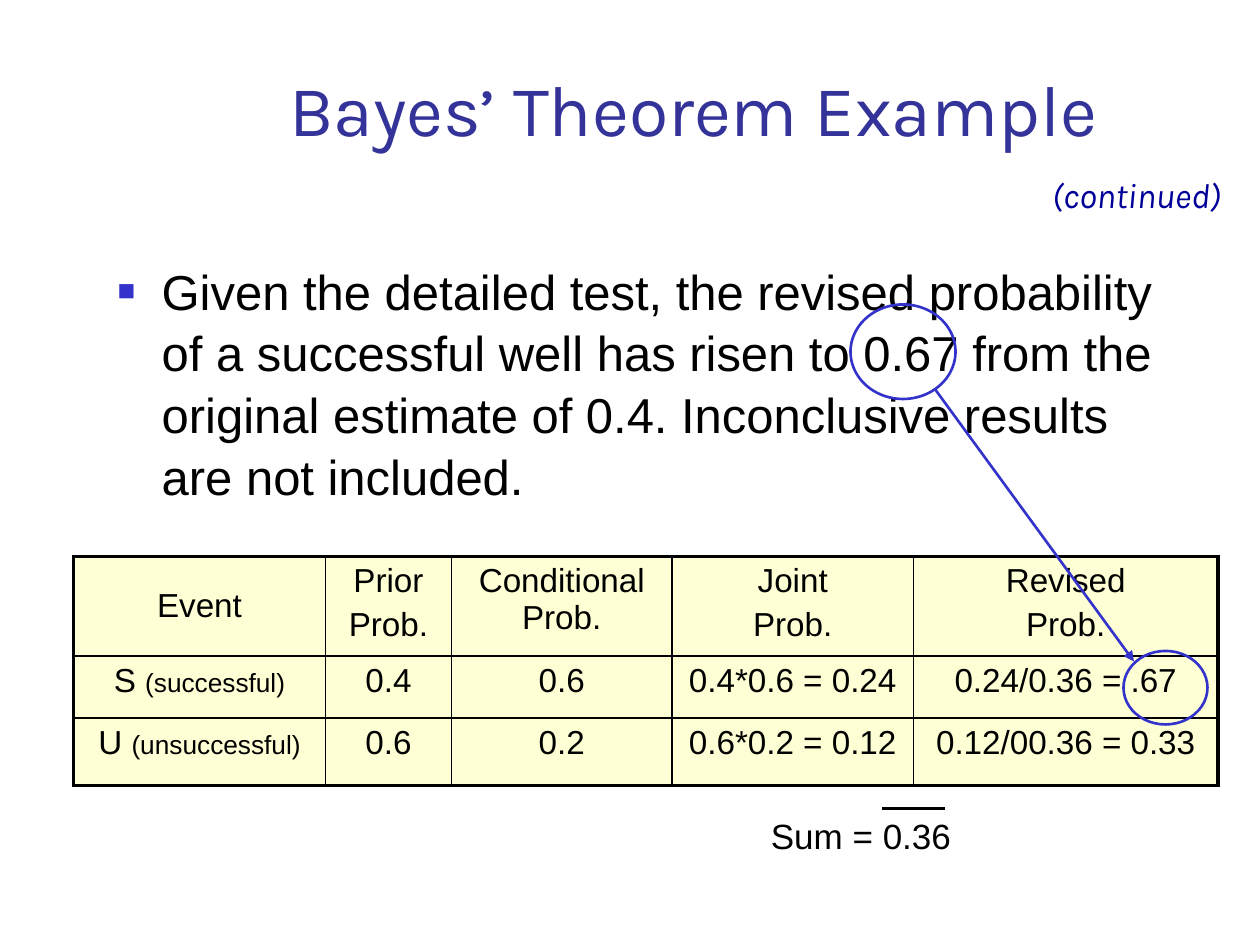
from dataclasses import dataclass
from typing import NamedTuple

from lxml.etree import SubElement
from pptx import Presentation
from pptx.dml.color import RGBColor as RGB
from pptx.enum.shapes import MSO_CONNECTOR as Link, MSO_SHAPE as Preset
from pptx.enum.text import MSO_ANCHOR as Anchor, MSO_AUTO_SIZE as Fit, PP_ALIGN as Align
from pptx.oxml.ns import qn
from pptx.util import Emu, Inches, Pt


@dataclass(frozen=True)
class Theme:
    sans: str = "Arial"
    display: str = "Karla"
    ink: str = "000000"
    title: str = "333399"
    note: str = "000099"
    accent: str = "3333CC"
    cell: str = "FFFFD5"
    title_size: int = 41
    body_size: int = 28
    label_size: int = 20
    cell_size: int = 19
    small_size: int = 15
    thin: float = 1
    line: float = 1.5
    thick: float = 2.25


class Box(NamedTuple):
    """A place on a grid of twelve units to the inch."""
    left: float
    top: float
    width: float
    height: float


class Arrow(NamedTuple):
    start: tuple
    end: tuple
    color: str
    head: bool


THEME = Theme()
TITLE = Box(15, 5, 102.2, 10)
BODY = Box(10, 24, 103, 22)
NOTE = Box(99, 15.9, 21, 5.2)
SUM = Box(72, 77, 20, 5.2)
TABLE = Box(7, 53, 109, 21.8)
RINGS = [Box(107, 62, 8, 7), Box(81, 29, 10, 9)]
LINES = [
    Arrow((84, 77), (90, 77), THEME.ink, False),
    Arrow((89, 37), (108, 63), THEME.accent, True),
]
COLS = [24, 12, 21, 23, 29]
ROWS = [9.5, 5.9, 6.4]
# A line break starts a paragraph; a bar starts a smaller run.
CELLS = [
    ["Event", "Prior\nProb.", "Conditional Prob.", "Joint\nProb.", "Revised\nProb."],
    ["S |(successful)", "0.4", "0.6", "0.4*0.6 = 0.24", "0.24/0.36 = .67"],
    ["U |(unsuccessful)", "0.6", "0.2", "0.6*0.2 = 0.12", "0.12/00.36 = 0.33"],
]
POINT = ("Given the detailed test, the revised probability of a successful well has "
         "risen to 0.67 from the original estimate of 0.4. Inconclusive results are "
         "not included.")


def unit(count: float) -> Emu:
    return Inches(count / 12)


def units(values) -> list:
    return [unit(v) for v in values]


def style(para, face: str, size: float, color: str, italic: bool = False) -> None:
    font = para.font
    font.name, font.size, font.italic = face, Pt(size), italic
    font.color.rgb = RGB.from_string(color)


def place(shape, box: Box) -> None:
    shape.left, shape.top, shape.width, shape.height = units(box)


def add_bullet(para, mark: str, color: str, share: int) -> None:
    props = para._p.get_or_add_pPr()
    props.set("marL", str(Inches(0.35)))
    props.set("indent", str(-Inches(0.35)))
    SubElement(SubElement(props, qn("a:buClr")), qn("a:srgbClr"), val=color)
    SubElement(props, qn("a:buSzPct"), val=str(share * 1000))
    SubElement(props, qn("a:buFont"), typeface=THEME.sans)
    SubElement(props, qn("a:buChar"), char=mark)


def fill_title(shape) -> None:
    place(shape, TITLE)
    frame = shape.text_frame
    frame.text = "Bayes’ Theorem Example"
    frame.auto_size, frame.vertical_anchor = Fit.NONE, Anchor.BOTTOM
    para = frame.paragraphs[0]
    para.alignment = Align.CENTER
    style(para, THEME.display, THEME.title_size, THEME.title)


def fill_body(shape) -> None:
    place(shape, BODY)
    frame = shape.text_frame
    frame.text = POINT
    frame.auto_size = Fit.NONE
    para = frame.paragraphs[0]
    para.line_spacing, para.space_before = 1.05, Pt(0)
    add_bullet(para, "■", THEME.accent, 60)
    style(para, THEME.sans, THEME.body_size, THEME.ink)


def add_label(slide, box: Box, text: str, align: Align, face: str, color: str,
              italic: bool = False) -> None:
    frame = slide.shapes.add_textbox(*units(box)).text_frame
    frame.text, frame.word_wrap = text, True
    para = frame.paragraphs[0]
    para.alignment = align
    style(para, face, THEME.label_size, color, italic)


def set_edge(cell, side: str, width: float) -> None:
    edge = SubElement(cell._tc.get_or_add_tcPr(), qn(f"a:ln{side}"), w=str(Pt(width)))
    fill = SubElement(edge, qn("a:solidFill"))
    SubElement(fill, qn("a:srgbClr"), val=THEME.ink)


def fill_cell(cell, text: str) -> None:
    frame = cell.text_frame
    for i, line in enumerate(text.split("\n")):
        para = frame.add_paragraph() if i else frame.paragraphs[0]
        para.alignment = Align.CENTER
        para.space_before = Pt(4 if i else 0)
        style(para, THEME.sans, THEME.cell_size, THEME.ink)
        for j, part in enumerate(line.split("|")):
            run = para.add_run()
            run.text = part
            if j:
                run.font.size = Pt(THEME.small_size)


def add_grid(slide) -> None:
    table = slide.shapes.add_table(len(ROWS), len(COLS), *units(TABLE)).table
    table.first_row = table.horz_banding = False
    for col, width in zip(table.columns, COLS):
        col.width = unit(width)
    for row, height in zip(table.rows, ROWS):
        row.height = unit(height)
    for r, texts in enumerate(CELLS):
        for c, text in enumerate(texts):
            cell = table.cell(r, c)
            fill_cell(cell, text)
            outer = {"L": c == 0, "R": c == len(COLS) - 1,
                     "T": r == 0, "B": r == len(ROWS) - 1}
            for side, rim in outer.items():
                set_edge(cell, side, THEME.thick if rim else THEME.thin)
            cell.fill.solid()
            cell.fill.fore_color.rgb = RGB.from_string(THEME.cell)
    table.cell(0, 0).vertical_anchor = Anchor.MIDDLE


def add_ring(slide, box: Box) -> None:
    ring = slide.shapes.add_shape(Preset.OVAL, *units(box))
    ring.shadow.inherit = False
    ring.fill.background()
    ring.line.color.rgb = RGB.from_string(THEME.accent)
    ring.line.width = Pt(THEME.line)


def add_line(slide, arrow: Arrow) -> None:
    line = slide.shapes.add_connector(Link.STRAIGHT, *units(arrow.start + arrow.end))
    line.line.color.rgb = RGB.from_string(arrow.color)
    line.line.width = Pt(THEME.line)
    if arrow.head:
        SubElement(line.line._get_or_add_ln(), qn("a:tailEnd"), type="triangle")
    SubElement(line._element.spPr, qn("a:effectLst"))


def main() -> None:
    deck = Presentation()
    deck.slide_width, deck.slide_height = Inches(10), Inches(7.5)
    slide = deck.slides.add_slide(deck.slide_layouts[1])
    fill_title(slide.shapes.title)
    fill_body(slide.placeholders[1])
    add_grid(slide)
    add_label(slide, SUM, "Sum = 0.36", Align.CENTER, THEME.sans, THEME.ink)
    for arrow in LINES:
        add_line(slide, arrow)
    for ring in RINGS:
        add_ring(slide, ring)
    add_label(slide, NOTE, "(continued)", Align.LEFT, THEME.display, THEME.note, True)
    deck.save("out.pptx")


if __name__ == "__main__":
    main()
